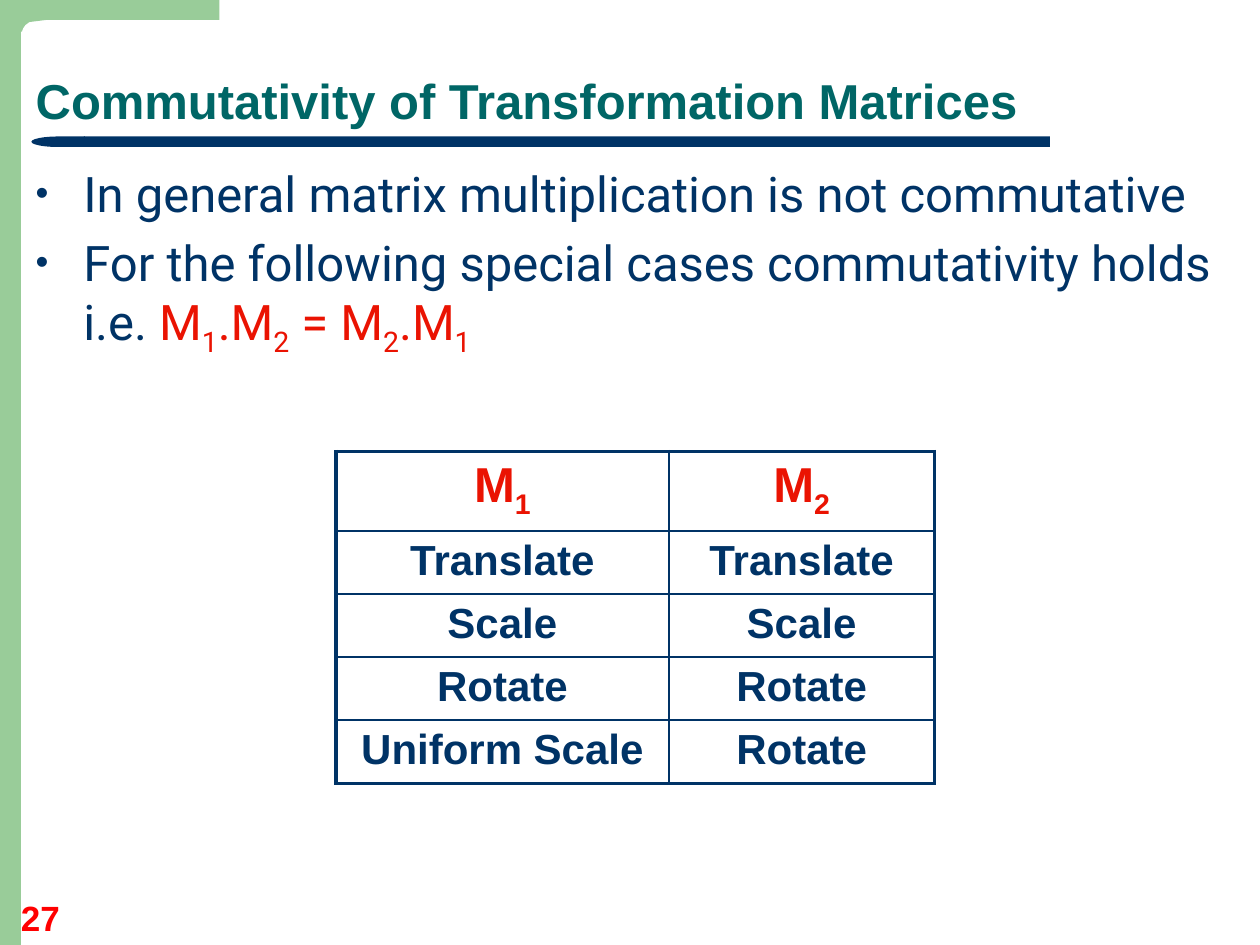
from lxml import etree
from pptx import Presentation, util as u
from pptx.dml.color import RGBColor
from pptx.enum import shapes, text
from pptx.oxml import ns

NAVY, TEAL, GREEN, RED, BRIGHT = "003366", "006666", "99CC99", "EA1302", "FF0000"
CELL = u.Inches(10) / 120
LEFT, CENTER = text.PP_ALIGN.LEFT, text.PP_ALIGN.CENTER


def grid(*counts):
    """Turn counts of grid cells into lengths."""
    return [u.Emu(round(count * CELL)) for count in counts]


def color(value):
    """Turn a hex string into a colour."""
    return RGBColor.from_string(value)


def child(parent, tag, **attributes):
    """Append a drawing element with its attributes."""
    element = etree.SubElement(parent, ns.qn(tag))
    for name, value in attributes.items():
        element.set(name, str(value))
    return element


def paint(shape, hue):
    """Give a shape a flat fill with no line or shadow."""
    shape.fill.solid()
    shape.fill.fore_color.rgb = color(hue)
    shape.line.fill.background()
    shape.shadow.inherit = False


def write(para, content, size=28, font="Arial", hue=NAVY, bold=False, align=LEFT):
    """Write text in a paragraph, where _ lowers the next character."""
    para.alignment = align
    for index, part in enumerate(content.split("_")):
        pieces = [(part[:1], True), (part[1:], False)] if index else [(part, False)]
        for words, lowered in pieces:
            if not words:
                continue
            span = para.add_run()
            span.text = words
            span.font.size, span.font.name, span.font.bold = u.Pt(size), font, bold
            span.font.color.rgb = color(hue)
            if lowered:
                span._r.get_or_add_rPr().set("baseline", "-25000")


def bullet(para):
    """Give a paragraph a small round bullet and a hanging indent."""
    props = para._p.get_or_add_pPr()
    indent = u.Inches(0.38)
    props.set("marL", str(indent))
    props.set("indent", str(-indent))
    child(child(props, "a:buClr"), "a:srgbClr", val=NAVY)
    child(props, "a:buSzPct", val=75000)
    child(props, "a:buFont", typeface="Arial")
    child(props, "a:buChar", char="•")


def draw_frame(page, side, reach, depth):
    """Draw the green side bar and the corner band above it."""
    bar = page.shapes.add_shape(shapes.MSO_SHAPE.RECTANGLE, *grid(0, 0, side, 90))
    paint(bar, GREEN)
    inner = [(4.4, 1.9), (3.6, 2), (2.8, 2.1), (2.4, 2.4), (2.2, 2.7), (2.1, depth)]
    outline = [(reach, 0), (reach, 1.9), *inner, (0, depth)]
    builder = page.shapes.build_freeform(0, 0)
    builder.add_line_segments([grid(*point) for point in outline], close=True)
    paint(builder.convert_to_shape(), GREEN)


def draw_rule(page, left, top, width, height):
    """Draw the navy rule with its rounded left tip."""
    tip = 5
    kinds = shapes.MSO_SHAPE
    body = page.shapes.add_shape(
        kinds.RECTANGLE, *grid(left + tip, top, width - tip, height))
    end = page.shapes.add_shape(
        kinds.FLOWCHART_DELAY, *grid(left, top, tip + 0.1, height))
    end._element.spPr.xfrm.set("flipH", "1")
    for shape in (body, end):
        paint(shape, NAVY)


def place_title(page, content, *box):
    """Move the title placeholder and fill it."""
    title = page.shapes.title
    title.left, title.top, title.width, title.height = grid(*box)
    frame = title.text_frame
    frame.vertical_anchor = text.MSO_ANCHOR.BOTTOM
    frame.auto_size = text.MSO_AUTO_SIZE.NONE
    para = frame.paragraphs[0]
    para.line_spacing = 0.9
    write(para, content, hue=TEAL, bold=True)


def place_points(page, points, *box):
    """Write bulleted points, each a list of text and colour pairs."""
    frame = page.shapes.add_textbox(*grid(*box)).text_frame
    frame.word_wrap = True
    for index, parts in enumerate(points):
        para = frame.add_paragraph() if index else frame.paragraphs[0]
        if index:
            para.space_before = u.Pt(5.6)
        bullet(para)
        for content, hue in parts:
            write(para, content, font="Roboto", hue=hue)


def place_number(page, number, *box):
    """Write the page number."""
    frame = page.shapes.add_textbox(*grid(*box)).text_frame
    frame.word_wrap = True
    frame.vertical_anchor = text.MSO_ANCHOR.BOTTOM
    write(frame.paragraphs[0], number, size=20, hue=BRIGHT, bold=True, align=CENTER)


def set_borders(cell, **widths):
    """Draw the four borders of a cell in the given point widths."""
    props = cell._tc.get_or_add_tcPr()
    for index, side in enumerate("LRTB"):
        line = etree.Element(ns.qn(f"a:ln{side}"), w=str(u.Pt(widths[side])))
        child(child(line, "a:solidFill"), "a:srgbClr", val=NAVY)
        props.insert(index, line)


def place_table(page, rows, columns, heights, left, top):
    """Place a table with a heavy outer border and a red head row."""
    box = grid(left, top, sum(columns), sum(heights))
    table = page.shapes.add_table(len(rows), len(columns), *box).table
    table.first_row = table.horz_banding = False
    for column, width in zip(table.columns, grid(*columns)):
        column.width = width
    for row, height in zip(table.rows, grid(*heights)):
        row.height = height
    thin, thick = 1, 2.25
    for r, row in enumerate(rows):
        for c, content in enumerate(row):
            cell = table.cell(r, c)
            cell.fill.background()
            size, hue = (24, NAVY) if r else (28, RED)
            write(cell.text_frame.paragraphs[0], content,
                  size=size, hue=hue, bold=True, align=CENTER)
            set_borders(cell, L=thin if c else thick, T=thin if r else thick,
                        R=thick if c == len(columns) - 1 else thin,
                        B=thick if r == len(rows) - 1 else thin)


def main():
    """Build the slide and save it."""
    deck = Presentation()
    deck.slide_width, deck.slide_height = grid(120, 90)
    page = deck.slides.add_slide(deck.slide_layouts[5])
    draw_frame(page, 2, 20.9, 3)
    draw_rule(page, 3, 13, 97, 1)
    place_title(page, "Commutativity of Transformation Matrices", 2.2, 2, 116, 11)
    points = [
        [("In general matrix multiplication is not commutative", NAVY)],
        [("For the following special cases commutativity holds i.e. ", NAVY),
         ("M_1.M_2 = M_2.M_1", RED)],
    ]
    place_points(page, points, 2.2, 15, 117, 71)
    place_number(page, "27", 0, 86, 7.7, 4)
    rows = [("M_1", "M_2"), ("Translate", "Translate"), ("Scale", "Scale"),
            ("Rotate", "Rotate"), ("Uniform Scale", "Rotate")]
    place_table(page, rows, (31.7, 25.3), (7, 6, 6, 6, 6), 32, 43)
    deck.save("out.pptx")


if __name__ == "__main__":
    main()
